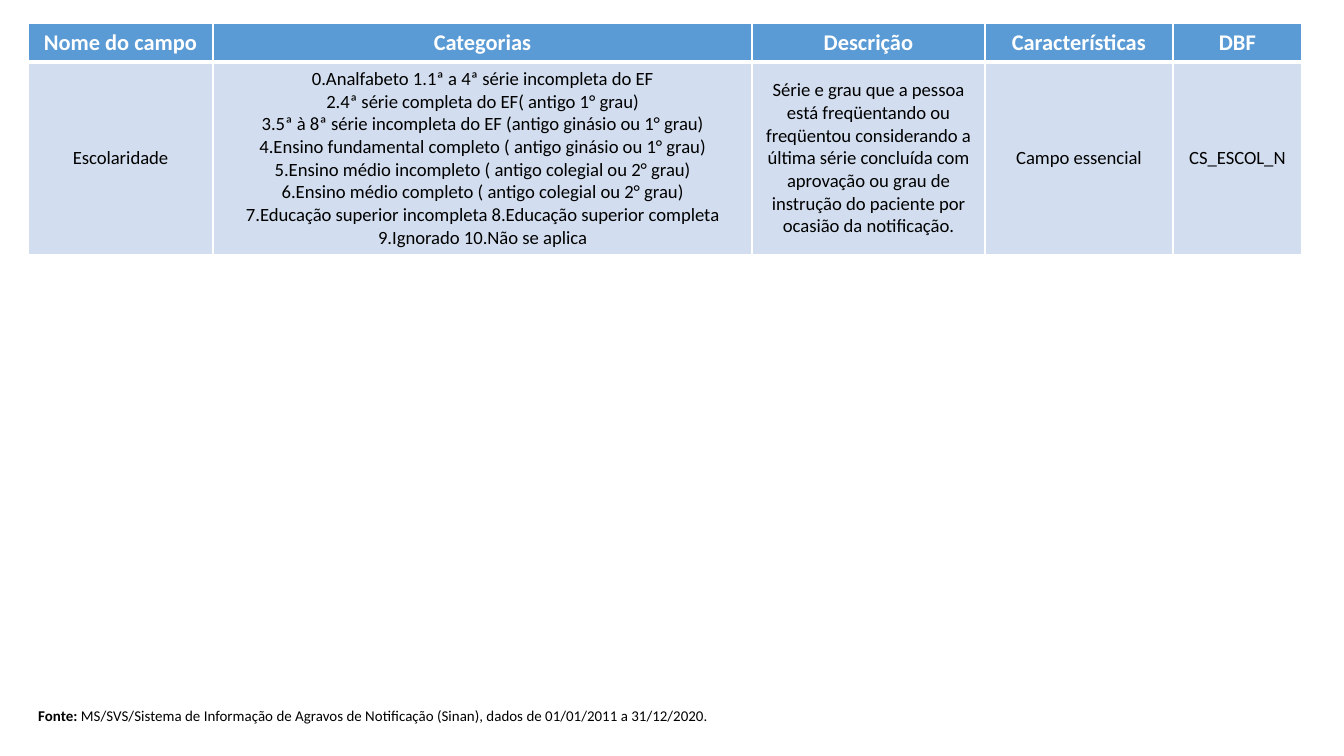
import pptx
import pptx.util
import pptx.dml.color
import pptx.enum.text
import pptx.oxml
import pptx.oxml.ns

SCALE = 914400 / 134.4
COLORS = {"header": "5B9BD5", "body": "D2DEEF", "white": "FFFFFF", "black": "000000"}
HEADER_FONT = {"name": "Calibri", "size": pptx.util.Pt(12), "bold": True}
BODY_FONT = {"name": "Calibri", "size": pptx.util.Pt(10), "bold": False}
SOURCE_FONT = {"name": "Calibri", "size": pptx.util.Pt(8)}

COLUMN_WIDTHS = [185, 539, 233, 188, 129]
ROW_HEIGHTS = [39, 193]
HEADERS = ["Nome do campo", "Categorias", "Descrição", "Características", "DBF"]
CATEGORIES = [
    "0.Analfabeto 1.1ª a 4ª série incompleta do EF",
    "2.4ª série completa do EF( antigo 1° grau)",
    "3.5ª à 8ª série incompleta do EF (antigo ginásio ou 1° grau)",
    "4.Ensino fundamental completo ( antigo ginásio ou 1° grau)",
    "5.Ensino médio incompleto ( antigo colegial ou 2° grau)",
    "6.Ensino médio completo ( antigo colegial ou 2° grau)",
    "7.Educação superior incompleta 8.Educação superior completa",
    "9.Ignorado 10.Não se aplica",
]
DESCRIPTION = (
    "Série e grau que a pessoa está freqüentando ou freqüentou considerando a "
    "última série concluída com aprovação ou grau de instrução do paciente por "
    "ocasião da notificação."
)
FIELD = ["Escolaridade", "\n".join(CATEGORIES), DESCRIPTION, "Campo essencial", "CS_ESCOL_N"]
SOURCE = [
    ("Fonte: ", True),
    ("MS/SVS/Sistema de Informação de Agravos de Notificação (Sinan), "
     "dados de 01/01/2011 a 31/12/2020.", False),
]


def px(length):
    return pptx.util.Emu(round(length * SCALE))


def rgb(name):
    return pptx.dml.color.RGBColor.from_string(COLORS[name])


def set_attributes(target, values):
    for name, value in values.items():
        setattr(target, name, value)


def format_font(font, values, color):
    set_attributes(font, values)
    font.color.rgb = rgb(color)


def add_borders(cell, widths):
    properties = cell._tc.get_or_add_tcPr()
    for index, (side, width) in enumerate(widths.items()):
        border = pptx.oxml.parse_xml(
            f'<a:ln{side} {pptx.oxml.ns.nsdecls("a")} w="{pptx.util.Pt(width)}">'
            f'<a:solidFill><a:srgbClr val="{COLORS["white"]}"/></a:solidFill></a:ln{side}>'
        )
        properties.insert(index, border)


def fill_cell(cell, text, fill, font, color, borders):
    set_attributes(cell, {
        "text": text,
        "vertical_anchor": pptx.enum.text.MSO_ANCHOR.MIDDLE,
        "margin_left": px(12), "margin_right": px(12),
        "margin_top": px(5), "margin_bottom": px(5),
    })
    cell.fill.solid()
    cell.fill.fore_color.rgb = rgb(fill)
    add_borders(cell, borders)
    for paragraph in cell.text_frame.paragraphs:
        paragraph.alignment = pptx.enum.text.PP_ALIGN.CENTER
        for run in paragraph.runs:
            format_font(run.font, font, color)


def add_field_table(slide):
    table = slide.shapes.add_table(
        len(ROW_HEIGHTS), len(COLUMN_WIDTHS), px(28), px(23),
        px(sum(COLUMN_WIDTHS)), px(sum(ROW_HEIGHTS)),
    ).table
    table.horz_banding = False
    for column, width in zip(table.columns, COLUMN_WIDTHS):
        column.width = px(width)
    for row, height in zip(table.rows, ROW_HEIGHTS):
        row.height = px(height)
    styles = [
        (HEADERS, "header", HEADER_FONT, "white", {"L": 1, "R": 1, "T": 1, "B": 3}),
        (FIELD, "body", BODY_FONT, "black", {"L": 1, "R": 1, "T": 3, "B": 1}),
    ]
    for row, (texts, *style) in zip(table.rows, styles):
        for cell, text in zip(row.cells, texts):
            fill_cell(cell, text, *style)


def add_source(slide):
    shape = slide.shapes.add_textbox(px(25), px(700), px(723), px(32))
    set_attributes(shape.text_frame, {
        "word_wrap": True,
        "auto_size": pptx.enum.text.MSO_AUTO_SIZE.SHAPE_TO_FIT_TEXT,
    })
    paragraph = shape.text_frame.paragraphs[0]
    for text, bold in SOURCE:
        run = paragraph.add_run()
        run.text = text
        format_font(run.font, {**SOURCE_FONT, "bold": bold}, "black")


def main():
    presentation = pptx.Presentation()
    set_attributes(presentation, {"slide_width": px(1344), "slide_height": px(756)})
    slide = presentation.slides.add_slide(presentation.slide_layouts[6])
    add_field_table(slide)
    add_source(slide)
    presentation.save("out.pptx")


if __name__ == "__main__":
    main()
